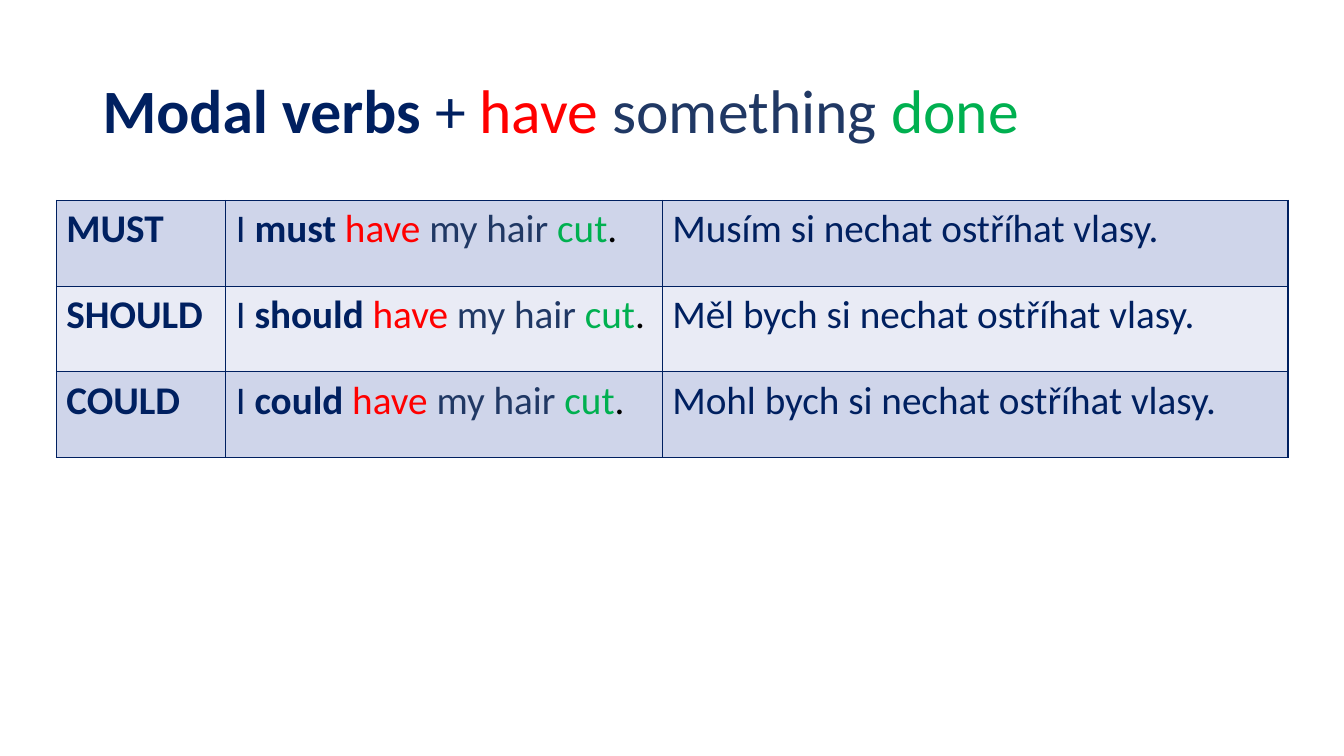
from dataclasses import dataclass

from lxml import etree
from pptx import Presentation
from pptx.dml.color import RGBColor
from pptx.enum.text import MSO_ANCHOR, PP_ALIGN
from pptx.oxml.ns import qn
from pptx.util import Cm, Pt

LEFT = PP_ALIGN.LEFT
MIDDLE = MSO_ANCHOR.MIDDLE
TITLE_ONLY = 5


@dataclass(frozen=True)
class Theme:
    font: str = "Calibri"
    navy: str = "002060"
    red: str = "FF0000"
    slate: str = "203864"
    green: str = "00B050"
    black: str = "000000"
    bands: tuple = ("CFD5EA", "E9EBF5")
    title: int = 44
    body: int = 28
    border: int = 1


THEME = Theme()

# Each run is (text, colour, bold).
TITLE = [
    ("Modal verbs ", THEME.navy, True),
    ("+ ", THEME.navy, False),
    ("have ", THEME.red, False),
    ("something ", THEME.slate, False),
    ("done", THEME.green, False),
]
MODALS = [
    ("must", "Musím si nechat ostříhat vlasy."),
    ("should", "Měl bych si nechat ostříhat vlasy."),
    ("could", "Mohl bych si nechat ostříhat vlasy."),
]
WIDTHS = [4.27, 11, 15.77]
ROW = 2.16


def row_runs(verb, czech):
    """Return the runs of the three cells for one modal verb."""
    example = [
        ("I ", THEME.navy, False),
        (f"{verb} ", THEME.navy, True),
        ("have ", THEME.red, False),
        ("my hair ", THEME.slate, False),
        ("cut", THEME.green, False),
        (".", THEME.black, False),
    ]
    return [
        [(verb.upper(), THEME.navy, True)],
        example,
        [(czech, THEME.navy, False)],
    ]


def write(frame, runs, size):
    line = frame.paragraphs[0]
    for text, color, bold in runs:
        run = line.add_run()
        run.text = text
        run.font.name = THEME.font
        run.font.size = Pt(size)
        run.font.bold = bold
        run.font.color.rgb = RGBColor.from_string(color)
    return line


def outline(cell):
    props = cell._tc.get_or_add_tcPr()
    for side in ("a:lnL", "a:lnR", "a:lnT", "a:lnB"):
        edge = etree.SubElement(props, qn(side), w=str(Pt(THEME.border)))
        fill = etree.SubElement(edge, qn("a:solidFill"))
        etree.SubElement(fill, qn("a:srgbClr"), val=THEME.navy)


def add_title(slide):
    title = slide.shapes.title
    title.left, title.top = Cm(2.33), Cm(1.02)
    title.width, title.height = Cm(29.21), Cm(3.68)
    title.text_frame.vertical_anchor = MIDDLE
    line = write(title.text_frame, TITLE, THEME.title)
    line.alignment = LEFT
    line.line_spacing = 0.9


def add_grid(slide):
    count = len(MODALS)
    table = slide.shapes.add_table(
        count, len(WIDTHS), Cm(1.42), Cm(5.05),
        Cm(sum(WIDTHS)), Cm(ROW * count),
    ).table
    table.first_row = False
    for col, width in zip(table.columns, WIDTHS):
        col.width = Cm(width)
    for i, (row, modal) in enumerate(zip(table.rows, MODALS)):
        row.height = Cm(ROW)
        band = RGBColor.from_string(THEME.bands[i % 2])
        for cell, runs in zip(row.cells, row_runs(*modal)):
            outline(cell)
            cell.fill.solid()
            cell.fill.fore_color.rgb = band
            write(cell.text_frame, runs, THEME.body)


def main():
    deck = Presentation()
    deck.slide_width, deck.slide_height = Cm(33.87), Cm(19.05)
    slide = deck.slides.add_slide(deck.slide_layouts[TITLE_ONLY])
    add_title(slide)
    add_grid(slide)
    deck.save("out.pptx")


if __name__ == "__main__":
    main()
